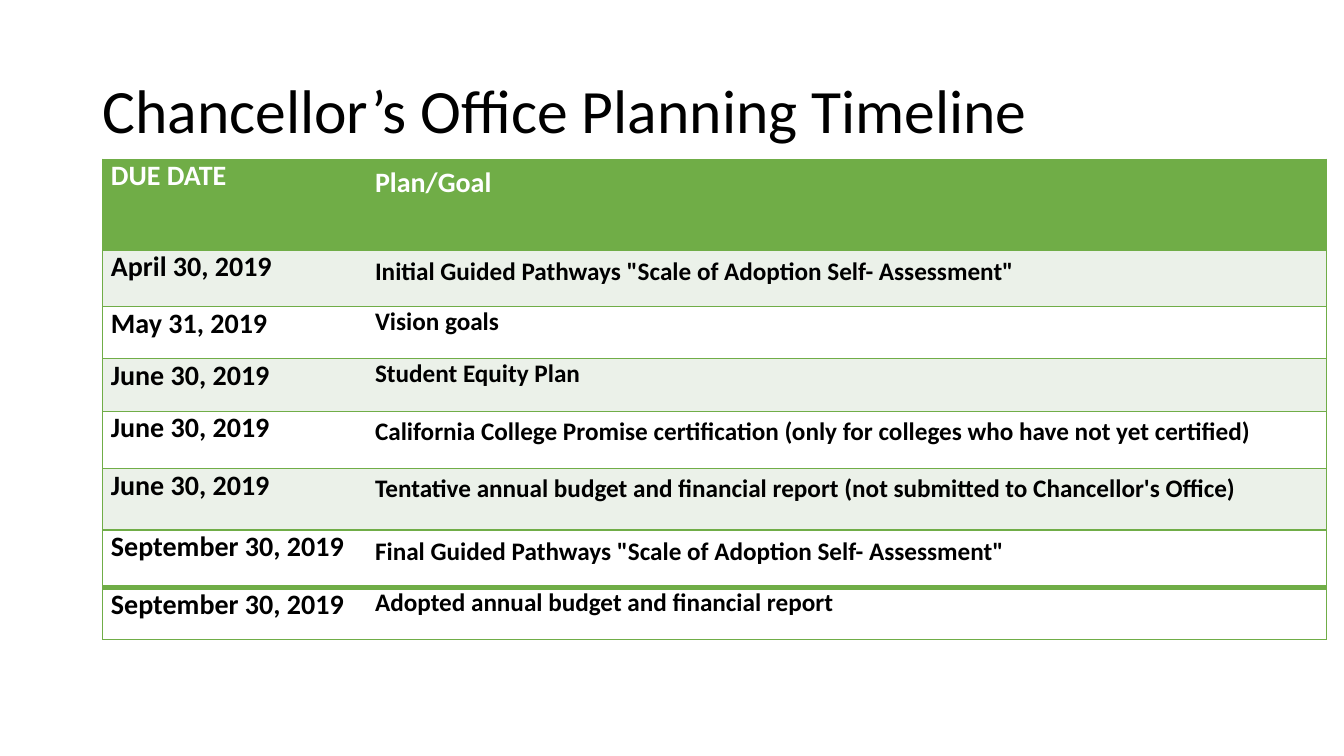
from dataclasses import dataclass

from lxml import etree
from pptx import Presentation
from pptx.dml.color import RGBColor
from pptx.enum.text import MSO_ANCHOR
from pptx.oxml.ns import qn
from pptx.util import Inches, Pt

MIDDLE = MSO_ANCHOR.MIDDLE


@dataclass(frozen=True)
class Theme:
    """Colours, font, type sizes and line widths of the slide."""
    font: str = "Calibri"
    green: str = "70AD47"
    band: str = "EBF1E9"
    white: str = "FFFFFF"
    black: str = "000000"
    title: int = 44
    label: int = 20
    body: int = 18
    thin: int = 1
    thick: int = 4


THEME = Theme()
COLUMN_WIDTHS = (2.62, 9.52)
TIMELINE = [
    ("DUE DATE", "Plan/Goal", 0.9, 1.2, 2.1),
    ("April 30, 2019", 'Initial Guided Pathways "Scale of Adoption Self- Assessment"',
     0.56, 1.2, 2.1),
    ("May 31, 2019", "Vision goals", 0.52, 1.0, 1.9),
    ("June 30, 2019", "Student Equity Plan", 0.52, 1.0, 1.9),
    ("June 30, 2019",
     "California College Promise certification (only for colleges who have not yet certified)",
     0.57, 1.17, 1.9),
    ("June 30, 2019",
     "Tentative annual budget and financial report (not submitted to Chancellor's Office)",
     0.61, 1.17, 2.1),
    ("September 30, 2019", 'Final Guided Pathways "Scale of Adoption Self- Assessment"',
     0.57, 1.2, 1.9),
    ("September 30, 2019", "Adopted annual budget and financial report", 0.52, 1.0, 2.1),
]


def style_run(p, size, color, bold=False):
    """Format the first run of a paragraph."""
    font = p.runs[0].font
    font.name = THEME.font
    font.size = Pt(size)
    font.bold = bold
    font.color.rgb = RGBColor.from_string(color)


def add_title(s, text):
    """Add the slide title."""
    tb = s.shapes.add_textbox(Inches(0.92), Inches(0.4), Inches(11.5), Inches(1.45))
    tf = tb.text_frame
    tf.word_wrap = True
    tf.vertical_anchor = MIDDLE
    tf.text = text
    p = tf.paragraphs[0]
    p.line_spacing = 0.9
    style_run(p, THEME.title, THEME.black)


def set_border(cell, side, width):
    """Draw one cell border, or hide it when the width is zero."""
    ln = etree.SubElement(cell._tc.get_or_add_tcPr(), qn(f"a:ln{side}"), w=str(Pt(width)))
    if width:
        fill = etree.SubElement(ln, qn("a:solidFill"))
        etree.SubElement(fill, qn("a:srgbClr"), val=THEME.green)
    else:
        etree.SubElement(ln, qn("a:noFill"))


def fill_cell(cell, text, size, color, fill, borders, spacing, before):
    """Write and format one table cell."""
    cell.margin_left = cell.margin_right = cell.margin_top = cell.margin_bottom = 0
    for side, width in borders.items():
        set_border(cell, side, width)
    cell.fill.solid()
    cell.fill.fore_color.rgb = RGBColor.from_string(fill)
    cell.text = text
    p = cell.text_frame.paragraphs[0]
    p.line_spacing = spacing
    p.space_before = Pt(before)
    p._p.get_or_add_pPr().set("marL", str(Inches(0.08)))
    style_run(p, size, color, bold=True)


def add_timeline(s):
    """Add the table of due dates and plans."""
    last = len(TIMELINE) - 1
    height = sum(row[2] for row in TIMELINE)
    frame = s.shapes.add_table(len(TIMELINE), len(COLUMN_WIDTHS), Inches(1.02), Inches(1.58),
                               Inches(sum(COLUMN_WIDTHS)), Inches(height))
    table = frame.table
    table.first_row = table.horz_banding = False
    for column, width in zip(table.columns, COLUMN_WIDTHS):
        column.width = Inches(width)
    for i, (date, plan, row_height, spacing, before) in enumerate(TIMELINE):
        table.rows[i].height = Inches(row_height)
        header = i == 0
        banded = i % 2 and i < last
        fill = THEME.green if header else THEME.band if banded else THEME.white
        color = THEME.white if header else THEME.black
        edges = {"T": THEME.thick if i == last else THEME.thin,
                 "B": THEME.thick if i == last - 1 else THEME.thin}
        fill_cell(table.cell(i, 0), date, THEME.label, color, fill,
                  {"L": THEME.thin, "R": 0, **edges}, 1.0, 2.4 if i < 2 else before)
        fill_cell(table.cell(i, 1), plan, THEME.label if header else THEME.body, color, fill,
                  {"L": 0, "R": THEME.thin, **edges}, spacing, before)


def main():
    """Build and save the slide."""
    prs = Presentation()
    prs.slide_width, prs.slide_height = Inches(13.33), Inches(7.5)
    s = prs.slides.add_slide(prs.slide_layouts[6])
    add_title(s, "Chancellor’s Office Planning Timeline")
    add_timeline(s)
    prs.save("out.pptx")


if __name__ == "__main__":
    main()
